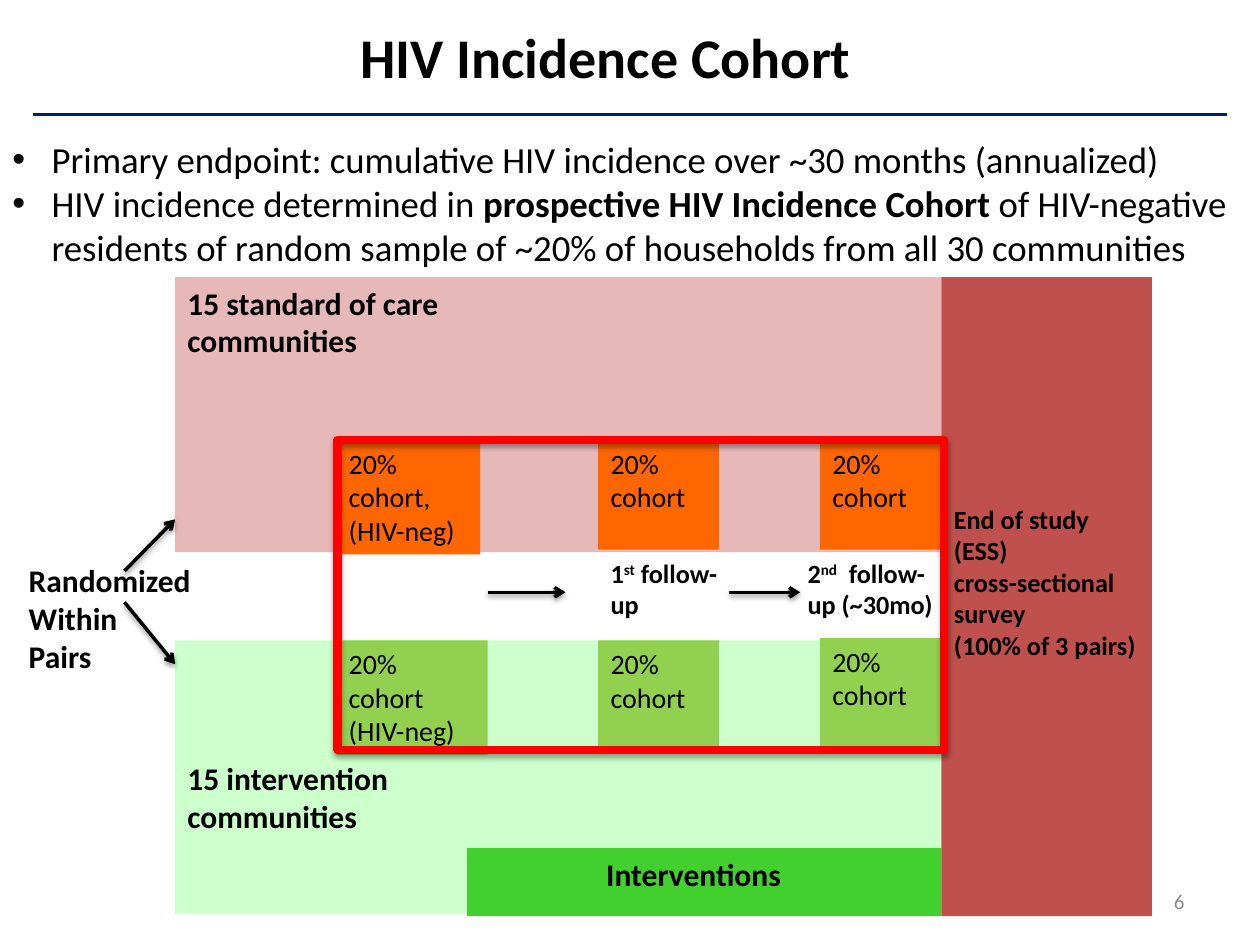
from lxml.etree import SubElement
from pptx import Presentation
from pptx.dml.color import RGBColor
from pptx.enum.shapes import MSO_CONNECTOR, MSO_SHAPE
from pptx.enum.text import MSO_ANCHOR, PP_ALIGN
from pptx.oxml.ns import qn
from pptx.util import Cm, Pt

BLACK = RGBColor(0x00, 0x00, 0x00)
WHITE = RGBColor(0xFF, 0xFF, 0xFF)
GRAY = RGBColor(0x8C, 0x8C, 0x8C)
NAVY = RGBColor(0x00, 0x20, 0x60)
PINK = RGBColor(0xE6, 0xB9, 0xB8)
PALE_GREEN = RGBColor(0xCC, 0xFF, 0xCC)
ORANGE = RGBColor(0xFF, 0x66, 0x00)
LIME = RGBColor(0x92, 0xD0, 0x50)
GREEN = RGBColor(0x42, 0xD0, 0x2E)
BRICK = RGBColor(0xC0, 0x50, 0x4D)
RED = RGBColor(0xFF, 0x00, 0x00)


def write(sp, paragraphs, size=18, bold=False, color=BLACK, align=PP_ALIGN.LEFT,
          anchor=MSO_ANCHOR.TOP, bullet=False, left=0.25, top=0.13):
    """Each paragraph is a string or a list of (text, style); style is "", "bold" or "super"."""
    tf = sp.text_frame
    tf.word_wrap = True
    tf.vertical_anchor = anchor
    tf.margin_left, tf.margin_top = Cm(left), Cm(top)
    for i, runs in enumerate(paragraphs):
        p = tf.paragraphs[0] if i == 0 else tf.add_paragraph()
        p.alignment = align
        if bullet:
            pPr = p._p.get_or_add_pPr()
            pPr.set("marL", str(Cm(0.79)))
            pPr.set("indent", str(Cm(-0.79)))
            SubElement(pPr, qn("a:buFont"), typeface="Arial")
            SubElement(pPr, qn("a:buChar"), char="•")
        for text, style in [(runs, "")] if isinstance(runs, str) else runs:
            r = p.add_run()
            r.text = text
            r.font.name = "Calibri"
            r.font.size = Pt(size)
            r.font.bold = bold or style == "bold"
            r.font.color.rgb = color
            if style == "super":
                r._r.get_or_add_rPr().set("baseline", "30000")


def add_label(s, box, paragraphs, **fmt):
    write(s.shapes.add_textbox(*map(Cm, box)), paragraphs, **fmt)


def add_block(s, box, fill, paragraphs=(), **fmt):
    sp = s.shapes.add_shape(MSO_SHAPE.RECTANGLE, *map(Cm, box))
    sp.shadow.inherit = False
    sp.fill.solid()
    sp.fill.fore_color.rgb = fill
    sp.line.fill.background()
    write(sp, paragraphs, **fmt)
    return sp


def add_shadow(sp, alpha):
    effects = SubElement(sp._element.spPr, qn("a:effectLst"))
    shadow = SubElement(effects, qn("a:outerShdw"), blurRad=str(Pt(3.1)),
                        dist=str(Pt(1.7)), dir="5400000", rotWithShape="0")
    color = SubElement(shadow, qn("a:srgbClr"), val="000000")
    SubElement(color, qn("a:alpha"), val=str(alpha * 1000))


def add_arrow(s, x1, y1, x2, y2):
    sp = s.shapes.add_connector(MSO_CONNECTOR.STRAIGHT, Cm(x1), Cm(y1), Cm(x2), Cm(y2))
    sp.line.color.rgb = BLACK
    sp.line.width = Pt(2)
    SubElement(sp.line._get_or_add_ln(), qn("a:tailEnd"), type="arrow")
    add_shadow(sp, 38)


def add_frame(s, box):
    sp = s.shapes.add_shape(MSO_SHAPE.RECTANGLE, *map(Cm, box))
    sp.fill.background()
    sp.line.color.rgb = RED
    sp.line.width = Pt(5)
    add_shadow(sp, 35)


def add_header(s, x, y, w):
    add_label(s, (x + 0.93, y, 21.29, 2.11), ["HIV Incidence Cohort"],
              size=32, bold=True, align=PP_ALIGN.CENTER)
    rule = add_block(s, (x, y + 1.91, w, 0.13), NAVY)
    rule.line.color.rgb = WHITE
    rule.line.width = Pt(2)


def add_summary(s, box):
    add_label(s, box, [
        "Primary endpoint: cumulative HIV incidence over ~30 months (annualized)",
        [("HIV incidence determined in ", ""),
         ("prospective HIV Incidence Cohort ", "bold"),
         ("of HIV-negative residents of random sample of ~20% of households "
          "from all 30 communities", "")],
    ], size=21, bullet=True)


def add_randomization(s, x, y):
    """Label left of the diagram, with an arrow to each arm."""
    add_label(s, (x, y, 4.4, 2.57), ["Randomized", "Within", "Pairs"], bold=True)
    add_arrow(s, x + 2.18, y + 0.33, x + 3.2, y - 0.71)
    add_arrow(s, x + 2.18, y + 0.96, x + 3.2, y + 2.21)


def add_cohorts(s, x, y):
    """Baseline and two follow-ups, one row for each arm."""
    columns = [  # left, orange width, lime width, height, lime top, texts
        (0, 2.9, 3.05, 2.31, 4.04, ["20% cohort,", "(HIV-neg)"], ["20% cohort", "(HIV-neg)"]),
        (5.28, 2.44, 2.44, 2.21, 4.04, ["20% cohort"], ["20% cohort"]),
        (9.75, 2.44, 2.44, 2.21, 3.99, ["20% cohort"], ["20% cohort"]),
    ]
    for dx, w_orange, w_lime, h, dy, care, treated in columns:
        add_block(s, (x + dx, y, w_orange, h), ORANGE, care, size=16)
        add_block(s, (x + dx, y + dy, w_lime, h), LIME, treated, size=16)
    follow_ups = [
        (5.28, 2.84, "1", "st", " follow-up"),
        (9.25, 3.4, "2", "nd", "  follow-up (~30mo)"),
    ]
    for dx, w, number, suffix, rest in follow_ups:
        add_label(s, (x + dx, y + 2.23, w, 1.54),
                  [[(number, ""), (suffix, "super"), (rest, "")]], size=15, bold=True)
    for start, end in ((3.05, 4.62), (7.92, 9.35)):
        add_arrow(s, x + start, y + 3.07, x + end, y + 3.07)


def add_diagram(s, x, y, w, h):
    arms_w = w - 4.24
    add_block(s, (x, y, arms_w, 5.54), PINK, ["15 standard of care", "communities"], bold=True)
    add_block(s, (x, y + 7.32, arms_w, 5.51), PALE_GREEN,
              ["15 intervention", "communities"], bold=True, top=2.4)
    add_block(s, (x + 5.89, y + h - 1.37, arms_w - 5.89, 1.37), GREEN,
              ["Interventions"], bold=True, left=2.8)
    add_randomization(s, x - 3.2, y + 5.59)
    add_cohorts(s, x + 3.25, y + 3.28)
    add_block(s, (x + arms_w, y, w - arms_w, h), BRICK,
              ["End of study", "(ESS)", "cross-sectional survey", "(100% of 3 pairs)"],
              size=15, bold=True, top=4.55)
    add_frame(s, (x + 3.28, y + 3.28, 12.22, 6.25))


def main():
    prs = Presentation()
    prs.slide_width, prs.slide_height = Cm(25.4), Cm(19.05)
    s = prs.slides.add_slide(prs.slide_layouts[6])
    add_header(s, 0.64, 0.33, 24.13)
    add_diagram(s, 3.53, 5.59, 19.69, 12.88)
    add_summary(s, (0, 2.63, 25.4, 2.95))
    add_label(s, (18.21, 17.65, 5.92, 1.02), ["6"], size=12, color=GRAY,
              align=PP_ALIGN.RIGHT, anchor=MSO_ANCHOR.MIDDLE)
    prs.save("out.pptx")


if __name__ == "__main__":
    main()
